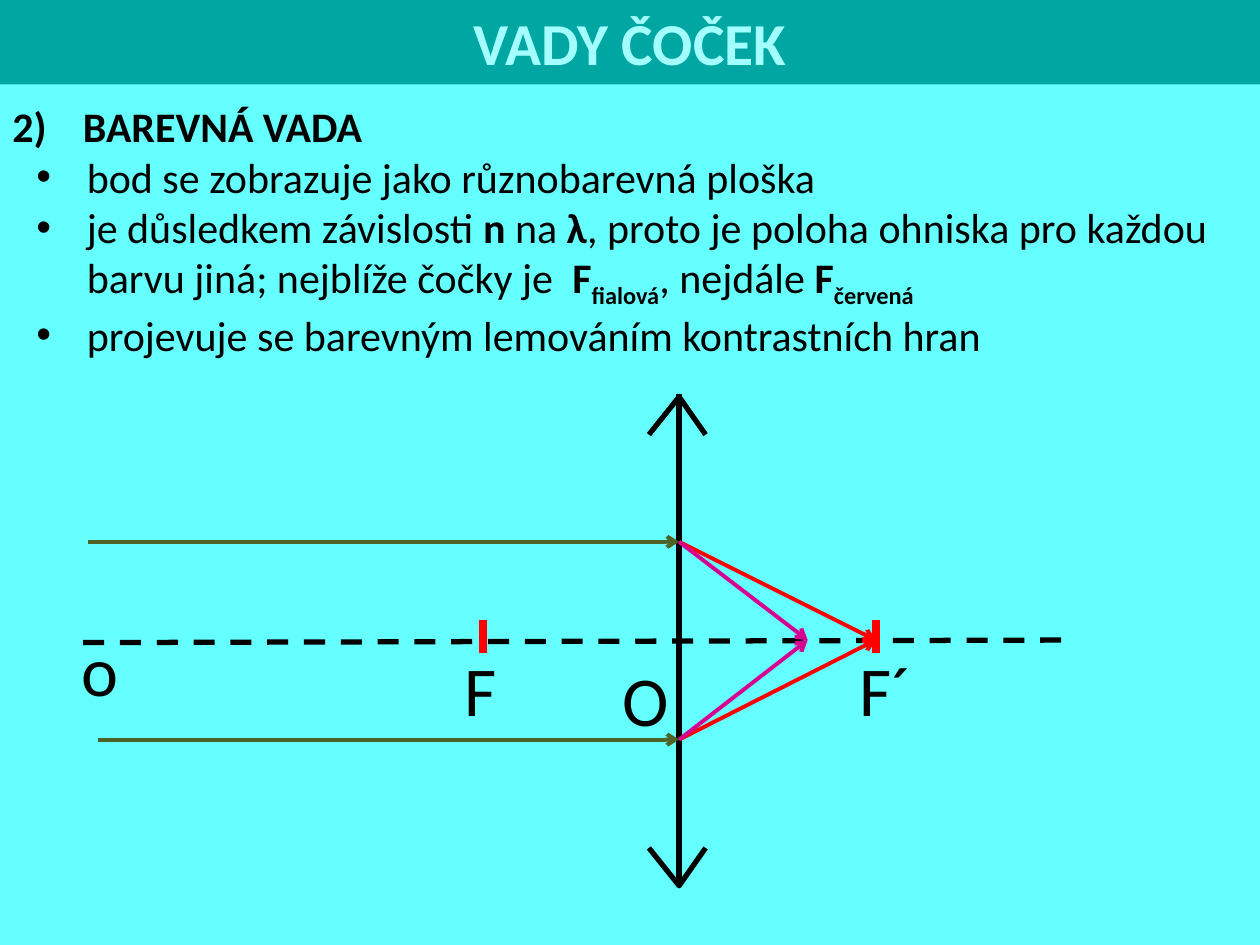
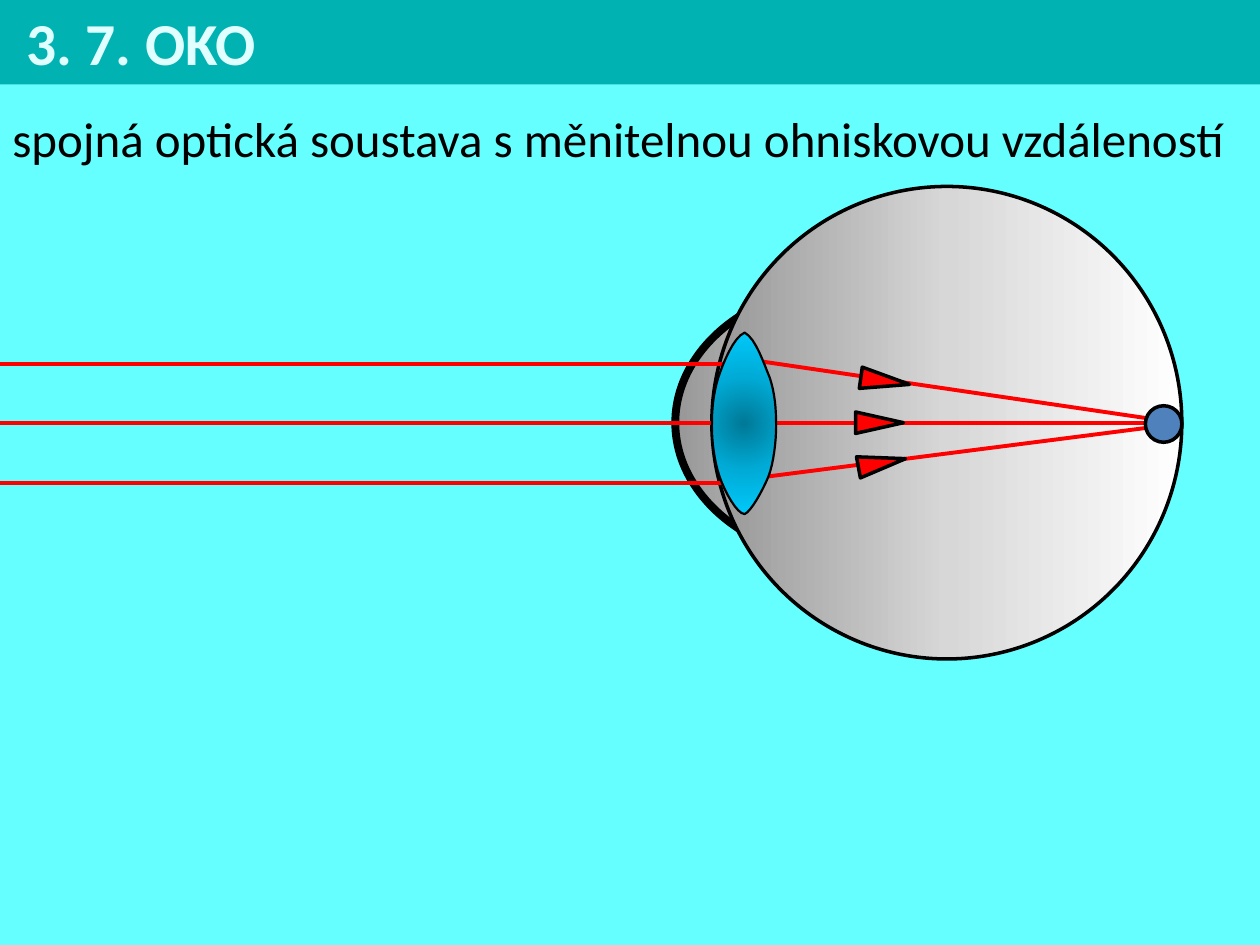
from lxml.etree import SubElement
from pptx import Presentation
from pptx.dml.color import RGBColor
from pptx.enum.dml import MSO_LINE
from pptx.enum.shapes import MSO_CONNECTOR, MSO_SHAPE
from pptx.enum.text import MSO_ANCHOR, MSO_AUTO_SIZE, PP_ALIGN
from pptx.oxml.ns import qn
from pptx.util import Inches, Pt

BLACK, RED, PINK, GREEN = "000000", "FF0000", "D60093", "4F6228"
AXIS, MID = 5.08, 3.36


def tint(fill, color):
    fill.solid()
    fill.fore_color.rgb = RGBColor.from_string(color)


def put(para, text, size=24, color=BLACK, bold=False, base=0, align=PP_ALIGN.LEFT):
    para.alignment = align
    run = para.add_run()
    run.text = text
    font = run.font
    font.name, font.size, font.bold = "Calibri", Pt(size), bold
    tint(font.fill, color)
    if base:
        run._r.get_or_add_rPr().set("baseline", str(base))


prs = Presentation()
prs.slide_width, prs.slide_height = Inches(10), Inches(7.5)
tint(prs.slide_master.background.fill, "66FFFF")

slides = []
for name, band, color, align, inset in [
    ("VADY ČOČEK", "00A6A2", "A3FFFF", PP_ALIGN.CENTER, 0.1),
    ("3. 7. OKO", "00B2B2", "E0FFFF", PP_ALIGN.LEFT, 0.21),
]:
    slide = prs.slides.add_slide(prs.slide_layouts[5])
    title = slide.shapes.title
    title.left, title.top, title.width, title.height = 0, 0, Inches(10), Inches(0.67)
    tint(title.fill, band)
    frame = title.text_frame
    frame.auto_size = MSO_AUTO_SIZE.NONE
    frame.vertical_anchor = MSO_ANCHOR.MIDDLE
    frame.margin_left = Inches(inset)
    put(frame.paragraphs[0], name, size=34, color=color, bold=True, align=align)
    slides.append(slide)
flaw, eye = [slide.shapes for slide in slides]

SUB = -25000
items = [
    [("BAREVNÁ VADA", True, 0)],
    [("bod se zobrazuje jako různobarevná ploška", False, 0)],
    [
        ("je důsledkem závislosti ", False, 0), ("n", True, 0), (" na ", False, 0),
        ("λ", True, 0),
        (", proto je poloha ohniska pro každou barvu jiná; nejblíže čočky je  ", False, 0),
        ("F", True, 0), ("fialová", True, SUB), (", nejdále ", False, 0),
        ("F", True, 0), ("červená", True, SUB),
    ],
    [("projevuje se barevným lemováním kontrastních hran", False, 0)],
]
frame = flaw.add_textbox(0, Inches(0.75), Inches(9.98), Inches(2.12)).text_frame
frame.word_wrap = True
for row, runs in enumerate(items):
    para = frame.add_paragraph() if row else frame.paragraphs[0]
    for text, bold, base in runs:
        put(para, text, bold=bold, base=base)
    left, hang = (0.59, 0.4) if row else (0.56, 0.56)
    props = para._p.get_or_add_pPr()
    props.set("marL", str(Inches(left)))
    props.set("indent", str(-Inches(hang)))
    if row:
        SubElement(props, qn("a:buFont"), typeface="Arial")
        SubElement(props, qn("a:buChar"), char="•")
    else:
        SubElement(props, qn("a:buFont"), typeface="+mj-lt")
        SubElement(props, qn("a:buAutoNum"), type="arabicParenR", startAt="2")

for shapes, text, x, y, wide, size in [
    (flaw, "F", 3.59, AXIS, 0.7, 40),
    (flaw, "F´", 6.72, AXIS, 0.7, 40),
    (flaw, "o", 0.55, 4.92, 1.09, 40),
    (flaw, "O", 4.84, 5.16, 1.09, 40),
    (eye, "spojná optická soustava s měnitelnou ohniskovou vzdáleností", 0, 0.81, 10, 28),
]:
    frame = shapes.add_textbox(Inches(x), Inches(y), Inches(wide), Inches(0.77)).text_frame
    frame.word_wrap = True
    put(frame.paragraphs[0], text, size=size)

for tip, base in [(3.15, 3.45), (7.03, 6.73)]:
    pen = flaw.build_freeform(Inches(5.15), Inches(base))
    pen.add_line_segments([(Inches(5.39), Inches(tip)), (Inches(5.6), Inches(base))], close=False)
    head = pen.convert_to_shape()
    head.shadow.inherit = False
    head.fill.background()
    tint(head.line.fill, BLACK)
    head.line.width = Pt(3)

rounds = []
for x, y, wide, high, width in [(5.36, 2.25, 2.87, 2.21, 4.5), (5.65, 1.48, 3.73, 3.75, 2)]:
    ball = eye.add_shape(MSO_SHAPE.OVAL, Inches(x), Inches(y), Inches(wide), Inches(high))
    ball.line.width = Pt(width)
    rounds.append(ball)

lines = [
    (flaw, 0.66, 5.1, 8.44, AXIS, BLACK, 3, "dash"),
    (flaw, 5.39, 3.13, 5.39, 7.03, BLACK, 3, ""),
]
for x in (6.95, 3.83):
    lines.append((flaw, x, 4.92, x, 5.18, RED, 4.5, ""))
for x, y in [(0.7, 4.3), (0.78, 5.87)]:
    lines.append((flaw, x, y, 5.39, y, GREEN, 2.25, "arrow"))
for x, color in [(6.95, RED), (6.41, PINK)]:
    for y in (4.3, 5.87):
        lines.append((flaw, 5.39, y, x, AXIS, color, 2.25, "arrow"))
for x, y in [(6.05, 2.87), (6.03, 3.79), (6.12, MID)]:
    lines.append((eye, x, y, 9.38, MID, RED, 2.25, ""))
for x, y in [(5.91, MID), (5.83, 2.89), (5.83, 3.83)]:
    lines.append((eye, x, y, 0, y, RED, 2.25, ""))

for shapes, x1, y1, x2, y2, color, width, style in lines:
    ray = shapes.add_connector(
        MSO_CONNECTOR.STRAIGHT, Inches(x1), Inches(y1), Inches(x2), Inches(y2)
    )
    tint(ray.line.fill, color)
    ray.line.width = Pt(width)
    if style == "dash":
        ray.line.dash_style = MSO_LINE.DASH
    if style == "arrow":
        SubElement(ray.line._get_or_add_ln(), qn("a:tailEnd"), type="arrow")
    SubElement(ray._element.spPr, qn("a:effectLst"))

for kind, x, y, wide, high, turn, color in [
    (MSO_SHAPE.RIGHT_ARROW, 6.83, 2.94, 0.39, 0.17, 7.8, RED),
    (MSO_SHAPE.RIGHT_ARROW, 6.79, 3.27, 0.38, 0.17, 0, RED),
    (MSO_SHAPE.RIGHT_ARROW, 6.81, 3.59, 0.38, 0.17, 349.5, RED),
    (MSO_SHAPE.OVAL, 9.09, 3.22, 0.29, 0.29, 0, "4F81BD"),
]:
    mark = eye.add_shape(kind, Inches(x), Inches(y), Inches(wide), Inches(high))
    mark.shadow.inherit = False
    mark.rotation = turn
    if kind == MSO_SHAPE.RIGHT_ARROW:
        mark.adjustments[0], mark.adjustments[1] = 0, 2.329
    tint(mark.fill, color)
    tint(mark.line.fill, BLACK)
    mark.line.width = Pt(2)

curves = [
    (5.82, 2.68, 5.74, 2.88, 5.7, 3),
    (5.66, 3.13, 5.65, 3.25, 5.65, 3.38),
    (5.65, 3.51, 5.67, 3.66, 5.71, 3.78),
    (5.75, 3.9, 5.85, 4.08, 5.91, 4.08),
    (5.96, 4.06, 6.05, 3.9, 6.1, 3.78),
    (6.14, 3.67, 6.16, 3.51, 6.16, 3.38),
    (6.16, 3.24, 6.15, 3.12, 6.11, 3),
    (6.06, 2.88, 6, 2.69, 5.91, 2.64),
]
x, y = 5.91, 2.64
pen = eye.build_freeform(Inches(x), Inches(y))
dots = []
for ax, ay, bx, by, cx, cy in curves:
    for step in range(1, 9):
        t = step / 8
        u = 1 - t
        dots.append(tuple(
            Inches(u**3 * p + 3 * u * u * t * a + 3 * u * t * t * b + t**3 * c)
            for p, a, b, c in [(x, ax, bx, cx), (y, ay, by, cy)]
        ))
    x, y = cx, cy
pen.add_line_segments(dots)
lens = pen.convert_to_shape()
lens.line.width = Pt(1.25)

GRAY, BLUE = ("979797", "D7D7D7", "FFFFFF"), ("007997", "00ACD7", "00CCFF")
for form, stops in [(rounds[0], GRAY), (rounds[1], GRAY), (lens, BLUE)]:
    form.shadow.inherit = False
    tint(form.line.fill, BLACK)
    form.fill.gradient()
    grad = form._element.spPr.find(qn("a:gradFill"))
    grad.clear()
    group = SubElement(grad, qn("a:gsLst"))
    for place, color in zip((0, 50000, 100000), stops):
        stop = SubElement(group, qn("a:gs"), pos=str(place))
        SubElement(stop, qn("a:srgbClr"), val=color)
    if form is lens:
        core = SubElement(grad, qn("a:path"), path="circle")
        SubElement(core, qn("a:fillToRect"), l="50000", t="50000", r="50000", b="50000")
    else:
        SubElement(grad, qn("a:lin"), ang="0", scaled="0")

prs.save("out.pptx")
